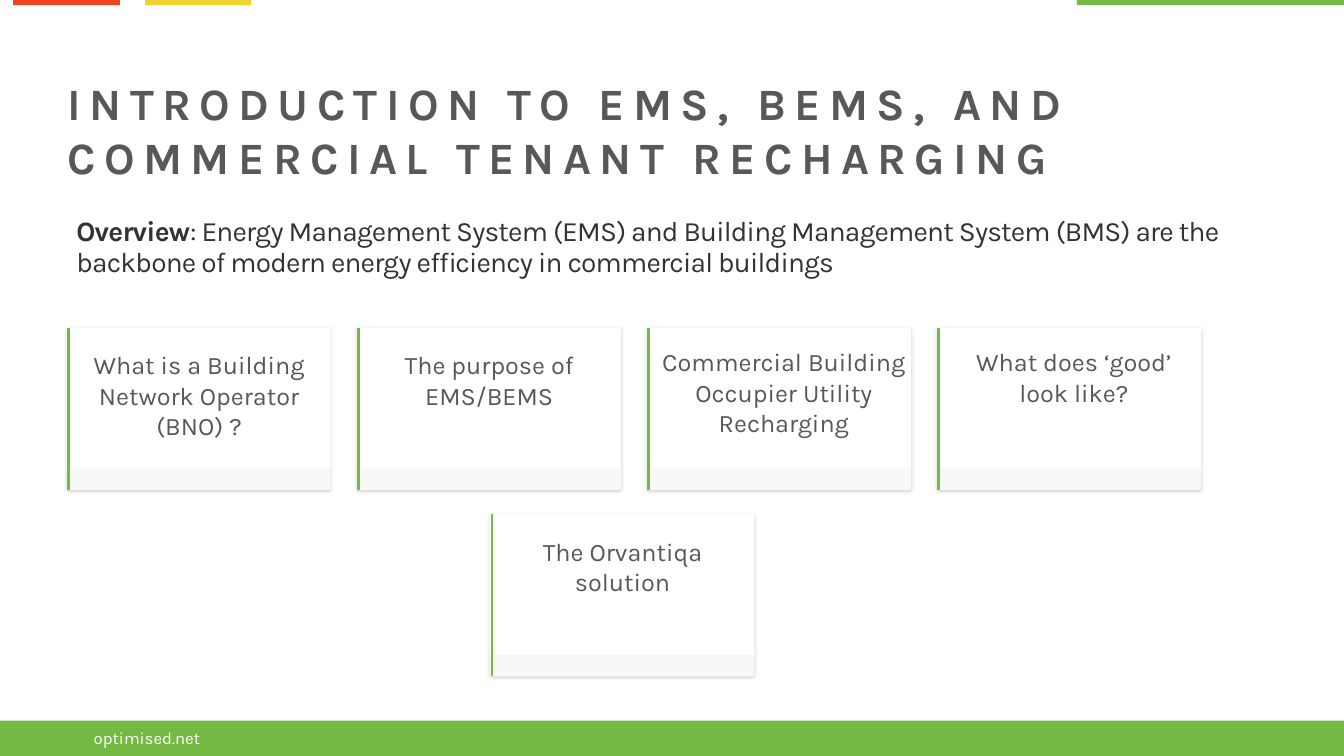
from dataclasses import dataclass

from lxml import etree
from pptx import Presentation
from pptx.dml.color import RGBColor
from pptx.enum.shapes import MSO_CONNECTOR, MSO_SHAPE
from pptx.enum.text import MSO_ANCHOR, MSO_AUTO_SIZE, PP_ALIGN
from pptx.oxml.ns import qn
from pptx.util import Inches, Pt

RECT = MSO_SHAPE.RECTANGLE
ROUND = MSO_SHAPE.ROUNDED_RECTANGLE
STRAIGHT = MSO_CONNECTOR.STRAIGHT
TOP = MSO_ANCHOR.TOP
FIXED = MSO_AUTO_SIZE.NONE
LEFT = PP_ALIGN.LEFT
CENTER = PP_ALIGN.CENTER


@dataclass(frozen=True)
class Theme:
    font: str = "Karla"
    green: str = "74B944"
    yellow: str = "F0D330"
    red: str = "EF4323"
    white: str = "FFFFFF"
    grey: str = "585859"
    ink: str = "323333"
    shade: str = "000000"
    title: int = 32
    lead: int = 20
    label: int = 18
    foot: int = 12


CARD_W, CARD_H = 2.62, 1.61
CARD_X, CARD_STEP = 0.66, 2.877
ROW_1, ROW_2 = 3.25, 5.1
NARROW = (0.06, 0.17, 2.51)
WIDE = (0.05, 0.14, 2.62)
CARDS = [
    ("What is a Building Network Operator (BNO) ?", NARROW),
    ("The purpose of EMS/BEMS", NARROW),
    ("Commercial Building Occupier Utility Recharging", WIDE),
    ("What does ‘good’ look like?", WIDE),
]


def add_color(parent, color, alpha):
    node = etree.SubElement(parent, qn("a:srgbClr"), val=color)
    etree.SubElement(node, qn("a:alpha"), val=str(alpha * 1000))


class Deck:
    def __init__(self, theme):
        self.theme = theme
        self.file = Presentation()
        self.file.slide_width = Inches(13.33)
        self.file.slide_height = Inches(7.5)
        self.slide = self.file.slides.add_slide(self.file.slide_layouts[5])

    def block(self, x, y, w, h, color, kind=RECT, alpha=100):
        shape = self.slide.shapes.add_shape(
            kind, Inches(x), Inches(y), Inches(w), Inches(h))
        shape.shadow.inherit = False
        shape.fill.solid()
        shape.fill.fore_color.rgb = RGBColor.from_string(color)
        shape.line.fill.background()
        if alpha < 100:
            fill = shape.fill._xPr.find(qn("a:solidFill"))
            fill.remove(fill[0])
            add_color(fill, color, alpha)
        return shape

    def run(self, para, text, size, color, bold=False, space=0):
        """Add a run; space is the letter spacing in points."""
        run = para.add_run()
        run.text = text
        font = run.font
        font.name, font.size, font.bold = self.theme.font, Pt(size), bold
        font.color.rgb = RGBColor.from_string(color)
        if space:
            run._r.get_or_add_rPr().set("spc", str(round(space * 100)))

    def frame(self, shape, align, pads):
        """Set up a text frame and return its first paragraph."""
        frame = shape.text_frame
        frame.word_wrap = True
        frame.auto_size = FIXED
        frame.vertical_anchor = TOP
        left, top, right, low = map(Inches, pads)
        frame.margin_left, frame.margin_top = left, top
        frame.margin_right, frame.margin_bottom = right, low
        para = frame.paragraphs[0]
        para.alignment = align
        return para

    def text(self, x, y, w, h, align=LEFT, pads=(0.1, 0.05, 0.1, 0.05)):
        box = self.slide.shapes.add_textbox(
            Inches(x), Inches(y), Inches(w), Inches(h))
        return self.frame(box, align, pads)

    def title(self, text):
        head = self.slide.shapes.title
        head.left, head.top = Inches(0.67), Inches(0.7)
        head.width, head.height = Inches(12), Inches(1.16)
        para = self.frame(head, LEFT, (0, 0.05, 0.25, 0.05))
        self.run(para, text, self.theme.title, self.theme.grey, True, 6)

    def line(self, x, top, low):
        line = self.slide.shapes.add_connector(
            STRAIGHT, Inches(x), Inches(top), Inches(x), Inches(low))
        line.line.color.rgb = RGBColor.from_string(self.theme.green)
        line.line.width = Pt(2)
        etree.SubElement(line._element.spPr, qn("a:effectLst"))

    def card(self, x, y, text, fit):
        """Draw a shadowed card; fit is the label's offset and width."""
        theme = self.theme
        base = self.block(x, y, CARD_W, CARD_H, theme.white, ROUND)
        base.adjustments[0] = 0.012
        glow = etree.SubElement(
            base._element.spPr.find(qn("a:effectLst")), qn("a:outerShdw"),
            blurRad=str(Pt(3)), dist=str(Pt(1)), dir="5400000",
            algn="t", rotWithShape="0")
        add_color(glow, theme.shade, 15)
        self.block(x, y + 1.4, CARD_W, 0.23, theme.grey, alpha=4)
        dx, dy, width = fit
        para = self.text(x + dx, y + dy, width, 1.05, CENTER)
        self.run(para, text, theme.label, theme.grey)
        self.line(x + 0.02, y, y + CARD_H)


def main():
    theme = Theme()
    deck = Deck(theme)

    deck.block(-0.04, 7.15, 13.38, 0.36, theme.green)
    foot = deck.text(0.88, 7.17, 1.44, 0.3, pads=(0.05,) * 4)
    deck.run(foot, "optimised.net", theme.foot, theme.white)
    for x, width, color in ((1.44, 1.05, theme.yellow),
                            (0.13, 1.06, theme.red),
                            (10.68, 2.65, theme.green)):
        deck.block(x, 0, width, 0.05, color)

    deck.title("INTRODUCTION TO EMS, BEMS, AND COMMERCIAL TENANT RECHARGING")
    lead = deck.text(0.66, 2.11, 12, 0.71)
    lead.line_spacing = 0.9
    deck.run(lead, "Overview", theme.lead, theme.ink, True, -0.6)
    deck.run(lead, ": Energy Management System (EMS) and Building Management "
             "System (BMS) are the backbone of modern energy efficiency in "
             "commercial buildings", theme.lead, theme.ink, space=-0.6)

    for i, (text, fit) in enumerate(CARDS):
        deck.card(CARD_X + i * CARD_STEP, ROW_1, text, fit)
    deck.card(4.86, ROW_2, "The Orvantiqa solution", NARROW)

    deck.file.save("out.pptx")


if __name__ == "__main__":
    main()
